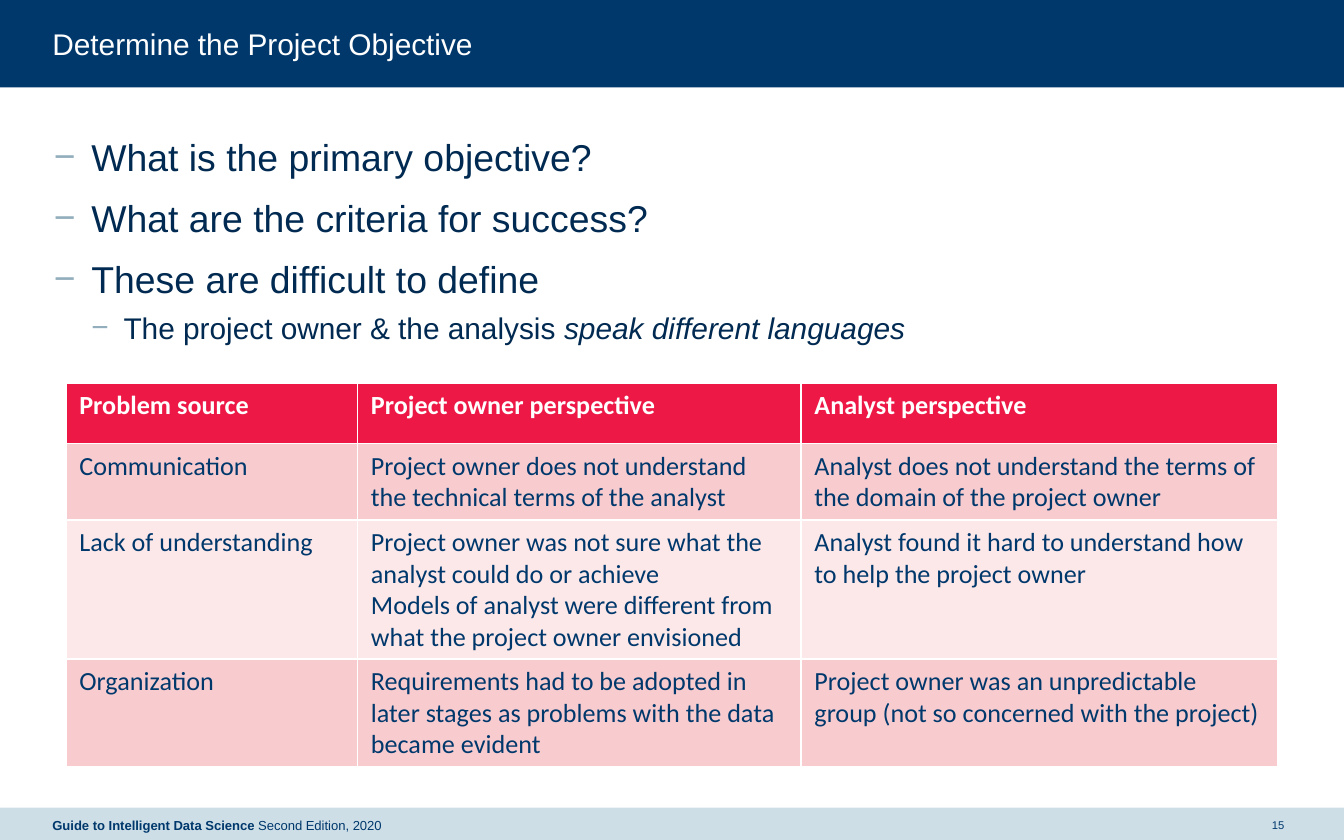
from dataclasses import dataclass

from lxml.etree import SubElement
from pptx import Presentation
from pptx.dml.color import RGBColor
from pptx.enum.shapes import MSO_SHAPE as Shape
from pptx.enum.text import MSO_ANCHOR as Anchor, PP_ALIGN as Align
from pptx.oxml.ns import qn
from pptx.util import Inches, Pt

WIDTH, HEIGHT = 10, 6.25
MARGIN = 0.039 * WIDTH
FOOTER_TOP, FOOTER_HEIGHT = 6.01, 0.26

NAVY = RGBColor(0x00, 0x38, 0x6C)
INK = RGBColor(0x00, 0x2A, 0x51)
PALE_BLUE = RGBColor(0xCD, 0xDE, 0xE7)
RED = RGBColor(0xED, 0x18, 0x46)
ROSE = RGBColor(0xF8, 0xCC, 0xCF)
PALE_ROSE = RGBColor(0xFC, 0xE8, 0xE9)
WHITE = RGBColor(0xFF, 0xFF, 0xFF)
BULLET_COLOR = "92AEBC"


@dataclass(frozen=True)
class Level:
    size: float
    indent: float
    hanging: float
    before: float


@dataclass(frozen=True)
class Bullet:
    level: int
    text: str
    emphasis: str = ""


LEVELS = [Level(20, 0.29, 0.28, 7.5), Level(16, 0.53, 0.24, 3.8)]
BULLETS = [
    Bullet(0, "What is the primary objective?"),
    Bullet(0, "What are the criteria for success?"),
    Bullet(0, "These are difficult to define"),
    Bullet(1, "The project owner & the analysis ", "speak different languages"),
]

COLUMNS = [2.17, 3.3, 3.55]
ROW_HEIGHTS = [0.45, 0.41, 0.41, 0.41]
TABLE = [
    ["Problem source", "Project owner perspective", "Analyst perspective"],
    ["Communication",
     "Project owner does not understand the technical terms of the analyst",
     "Analyst does not understand the terms of the domain of the project owner"],
    ["Lack of understanding",
     "Project owner was not sure what the analyst could do or achieve\n"
     "Models of analyst were different from what the project owner envisioned",
     "Analyst found it hard to understand how to help the project owner"],
    ["Organization",
     "Requirements had to be adopted in later stages as problems with the data became evident",
     "Project owner was an unpredictable group (not so concerned with the project)"],
]


def add_text(p, text: str, *, size: float, color: RGBColor, font: str = "Arial",
             bold: bool = False, italic: bool = False) -> None:
    """Append formatted text to a paragraph; newlines become line breaks."""
    for i, line in enumerate(text.split("\n")):
        if i:
            p.add_line_break()
        r = p.add_run()
        r.text = line
        r.font.name, r.font.size = font, Pt(size)
        r.font.bold, r.font.italic = bold, italic
        r.font.color.rgb = color


def add_box(s, left: float, top: float, width: float, height: float, anchor=Anchor.TOP):
    """Add a wrapping text box without insets and return its text frame."""
    tf = s.shapes.add_textbox(*map(Inches, (left, top, width, height))).text_frame
    tf.word_wrap, tf.vertical_anchor = True, anchor
    tf.margin_left = tf.margin_top = tf.margin_right = tf.margin_bottom = 0
    return tf


def add_band(s, top: float, height: float, color: RGBColor) -> None:
    sp = s.shapes.add_shape(Shape.RECTANGLE, *map(Inches, (0, top, WIDTH, height)))
    sp.shadow.inherit = False
    sp.fill.solid()
    sp.fill.fore_color.rgb = color
    sp.line.fill.background()


def add_bullet(p, bullet: Bullet) -> None:
    level = LEVELS[bullet.level]
    p.level = bullet.level
    p.space_before, p.line_spacing = Pt(level.before), 1.05
    pPr = p._p.get_or_add_pPr()
    pPr.set("marL", str(Inches(level.indent)))
    pPr.set("indent", str(-Inches(level.hanging)))
    SubElement(SubElement(pPr, qn("a:buClr")), qn("a:srgbClr"), val=BULLET_COLOR)
    SubElement(pPr, qn("a:buFont"), typeface="Arial")
    SubElement(pPr, qn("a:buChar"), char="−")
    add_text(p, bullet.text, size=level.size, color=INK)
    if bullet.emphasis:
        add_text(p, bullet.emphasis, size=level.size, color=INK, italic=True)


def add_perspectives(s) -> None:
    frame = s.shapes.add_table(len(TABLE), len(COLUMNS), Inches(0.49), Inches(2.85),
                               Inches(sum(COLUMNS)), Inches(sum(ROW_HEIGHTS)))
    table = frame.table
    for column, width in zip(table.columns, COLUMNS):
        column.width = Inches(width)
    for i, (row, height) in enumerate(zip(table.rows, ROW_HEIGHTS)):
        row.height = Inches(height)
        header = i == 0
        fill = RED if header else (ROSE if i % 2 else PALE_ROSE)
        for cell, text in zip(row.cells, TABLE[i]):
            cell.fill.solid()
            cell.fill.fore_color.rgb = fill
            add_text(cell.text_frame.paragraphs[0], text, size=14, font="Calibri",
                     color=WHITE if header else NAVY, bold=header)


def main() -> None:
    prs = Presentation()
    prs.slide_width, prs.slide_height = Inches(WIDTH), Inches(HEIGHT)
    s = prs.slides.add_slide(prs.slide_layouts[6])

    add_band(s, 0, 0.65, NAVY)
    add_band(s, FOOTER_TOP, FOOTER_HEIGHT, PALE_BLUE)

    title = add_box(s, MARGIN, 0.19, WIDTH - 2 * MARGIN, 0.27)
    add_text(title.paragraphs[0], "Determine the Project Objective", size=16, color=WHITE)

    body = add_box(s, MARGIN, 0.98, 9.16, 4.71)
    for i, bullet in enumerate(BULLETS):
        add_bullet(body.add_paragraph() if i else body.paragraphs[0], bullet)

    add_perspectives(s)

    p = add_box(s, MARGIN, FOOTER_TOP, 4.39, FOOTER_HEIGHT, Anchor.MIDDLE).paragraphs[0]
    add_text(p, "Guide to Intelligent Data Science ", size=7, color=NAVY, bold=True)
    add_text(p, "Second Edition, 2020", size=7, color=NAVY)

    p = add_box(s, 9.41, FOOTER_TOP, 0.2, FOOTER_HEIGHT, Anchor.MIDDLE).paragraphs[0]
    p.alignment = Align.CENTER
    add_text(p, "15", size=6, color=NAVY)

    prs.save("out.pptx")


if __name__ == "__main__":
    main()
